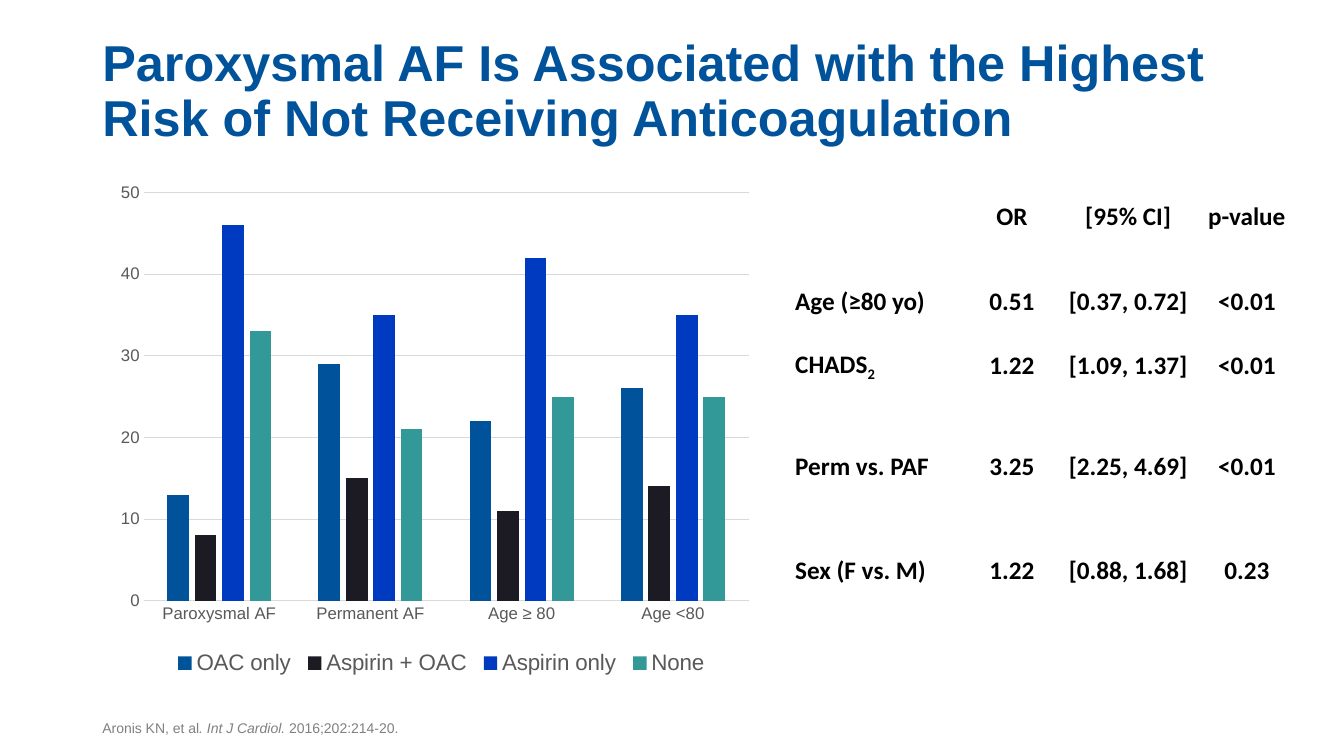
from dataclasses import dataclass

from lxml import etree
from pptx import Presentation
from pptx.chart.axis import CategoryAxis, ValueAxis
from pptx.chart.chart import Chart
from pptx.chart.data import CategoryChartData
from pptx.dml.color import RGBColor
from pptx.enum.chart import XL_CHART_TYPE, XL_LEGEND_POSITION, XL_TICK_MARK
from pptx.enum.text import MSO_ANCHOR, PP_ALIGN
from pptx.oxml.ns import qn
from pptx.slide import Slide
from pptx.table import _Cell
from pptx.text.text import Font, TextFrame
from pptx.util import Cm, Pt

CLUSTERED = XL_CHART_TYPE.COLUMN_CLUSTERED
LEGEND_BOTTOM = XL_LEGEND_POSITION.BOTTOM
NO_TICKS = XL_TICK_MARK.NONE
TOP, MIDDLE, BOTTOM = MSO_ANCHOR.TOP, MSO_ANCHOR.MIDDLE, MSO_ANCHOR.BOTTOM
LEFT, CENTER = PP_ALIGN.LEFT, PP_ALIGN.CENTER

COLORS = {
    "blue": "00539B",
    "ink": "1C1B24",
    "royal": "003AC1",
    "teal": "339898",
    "grid": "D9D9D9",
    "axis text": "595959",
    "citation": "808080",
    "black": "000000",
}


@dataclass
class Treatment:
    name: str
    percentages: tuple[int, ...]
    color: str


@dataclass
class Predictor:
    label: str
    odds_ratio: str
    interval: str
    p_value: str
    height: float
    subscript: str = ""


GROUPS = ("Paroxysmal AF", "Permanent AF", "Age ≥ 80", "Age <80")
TREATMENTS = (
    Treatment("OAC only", (13, 29, 22, 26), "blue"),
    Treatment("Aspirin + OAC", (8, 15, 11, 14), "ink"),
    Treatment("Aspirin only", (46, 35, 42, 35), "royal"),
    Treatment("None", (33, 21, 25, 25), "teal"),
)
HEADER = Predictor("", "OR", "[95% CI]", "p-value", 1.72)
PREDICTORS = (
    Predictor("Age (≥80 yo)", "0.51", "[0.37, 0.72]", "<0.01", 1.62),
    Predictor("CHADS", "1.22", "[1.09, 1.37]", "<0.01", 1.62, subscript="2"),
    Predictor("Perm vs. PAF", "3.25", "[2.25, 4.69]", "<0.01", 3.45),
    Predictor("Sex (F vs. M)", "1.22", "[0.88, 1.68]", "0.23", 1.8),
)
COLUMN_WIDTHS = (4.36, 2.46, 3.4, 2.58)
PLOT_LAYOUT = {"layoutTarget": "inner", "xMode": "edge", "yMode": "edge",
               "x": 0.124, "y": 0.042, "w": 0.876, "h": 0.71}
LEGEND_LAYOUT = {"xMode": "edge", "yMode": "edge", "x": 0.16, "y": 0.83, "w": 0.79, "h": 0.06}


def rgb(color: str) -> RGBColor:
    return RGBColor.from_string(COLORS[color])


def set_font(font: Font, size: float, color: str, name: str = "Arial", bold: bool = False) -> None:
    font.size, font.name, font.bold = Pt(size), name, bold
    font.color.rgb = rgb(color)


def add_bottom_text(slide: Slide, top: float, height: float) -> TextFrame:
    """Add a full-width text box whose text sits on its lower edge."""
    frame = slide.shapes.add_textbox(Cm(2.33), Cm(top), Cm(29.21), Cm(height)).text_frame
    frame.word_wrap = True
    frame.vertical_anchor = BOTTOM
    return frame


def add_title(slide: Slide) -> None:
    title = add_bottom_text(slide, 0.76, 3.07).paragraphs[0]
    title.text = "Paroxysmal AF Is Associated with the Highest Risk of Not Receiving Anticoagulation"
    title.line_spacing = 0.9
    set_font(title.font, 36, "blue", bold=True)


def add_citation(slide: Slide) -> None:
    citation = add_bottom_text(slide, 17.65, 1.02).paragraphs[0]
    set_font(citation.font, 10, "citation")
    for part, italic in (("Aronis KN, et al", False), (". Int J Cardiol. ", True), ("2016;202:214-20.", False)):
        run = citation.add_run()
        run.text = part
        run.font.italic = italic


def style_axis(axis: CategoryAxis | ValueAxis) -> None:
    axis.major_tick_mark = axis.minor_tick_mark = NO_TICKS
    set_font(axis.tick_labels.font, 12, "axis text")


def place_chart_part(chart: Chart, tag: str, position: int, settings: dict[str, str | float]) -> None:
    """Place a chart part by fractions of the chart's size; position is the layout's index in the part."""
    part = chart.element.find(".//" + qn(tag))
    for automatic in part.findall(qn("c:layout")):
        part.remove(automatic)
    layout = etree.Element(qn("c:layout"))
    manual = etree.SubElement(layout, qn("c:manualLayout"))
    for name, value in settings.items():
        etree.SubElement(manual, qn(f"c:{name}")).set("val", str(value))
    part.insert(position, layout)


def add_treatment_chart(slide: Slide) -> None:
    data = CategoryChartData()
    data.categories = GROUPS
    for treatment in TREATMENTS:
        data.add_series(treatment.name, treatment.percentages)
    chart = slide.shapes.add_chart(CLUSTERED, Cm(1.46), Cm(4.24), Cm(17.42), Cm(14.5), data).chart
    chart.has_title = False
    set_font(chart.font, 10, "black")

    plot = chart.plots[0]
    plot.gap_width, plot.overlap, plot.vary_by_categories = 219, -27, False
    for series, treatment in zip(plot.series, TREATMENTS):
        series.format.fill.solid()
        series.format.fill.fore_color.rgb = rgb(treatment.color)

    groups, percentages = chart.category_axis, chart.value_axis
    style_axis(groups)
    style_axis(percentages)
    percentages.minimum_scale, percentages.maximum_scale, percentages.major_unit = 0, 50, 10
    percentages.format.line.fill.background()
    for line in (groups.format.line, percentages.major_gridlines.format.line):
        line.color.rgb = rgb("grid")
        line.width = Pt(0.75)

    chart.has_legend = True
    chart.legend.position = LEGEND_BOTTOM
    chart.legend.include_in_layout = False
    set_font(chart.legend.font, 16, "axis text")
    place_chart_part(chart, "c:plotArea", 0, PLOT_LAYOUT)
    place_chart_part(chart, "c:legend", 1, LEGEND_LAYOUT)


def fill_cell(cell: _Cell, text: str, anchor: MSO_ANCHOR, alignment: PP_ALIGN, subscript: str = "") -> None:
    cell.fill.background()
    cell.margin_left = cell.margin_right = Cm(0.13)
    cell.margin_top = cell.margin_bottom = Cm(0)
    cell.vertical_anchor = anchor
    paragraph = cell.text_frame.paragraphs[0]
    paragraph.text = text
    paragraph.alignment = alignment
    set_font(paragraph.font, 18, "black", "Calibri", bold=True)
    if subscript:
        run = paragraph.add_run()
        run.text = subscript
        run._r.get_or_add_rPr().set("baseline", "-25000")


def add_odds_table(slide: Slide) -> None:
    rows = (HEADER, *PREDICTORS)
    table = slide.shapes.add_table(
        len(rows), len(COLUMN_WIDTHS), Cm(19.91), Cm(5.08),
        Cm(sum(COLUMN_WIDTHS)), Cm(sum(row.height for row in rows)),
    ).table
    table.first_row = table.horz_banding = False
    for column, width in zip(table.columns, COLUMN_WIDTHS):
        column.width = Cm(width)
    for index, row in enumerate(rows):
        table.rows[index].height = Cm(row.height)
        anchor = TOP if row is HEADER else MIDDLE
        fill_cell(table.cell(index, 0), row.label, anchor, LEFT, row.subscript)
        for column, value in enumerate((row.odds_ratio, row.interval, row.p_value), start=1):
            fill_cell(table.cell(index, column), value, anchor, CENTER)


def main() -> None:
    deck = Presentation()
    deck.slide_width, deck.slide_height = Cm(33.87), Cm(19.05)
    slide = deck.slides.add_slide(deck.slide_layouts[6])
    add_treatment_chart(slide)
    add_odds_table(slide)
    add_title(slide)
    add_citation(slide)
    deck.save("out.pptx")


if __name__ == "__main__":
    main()
